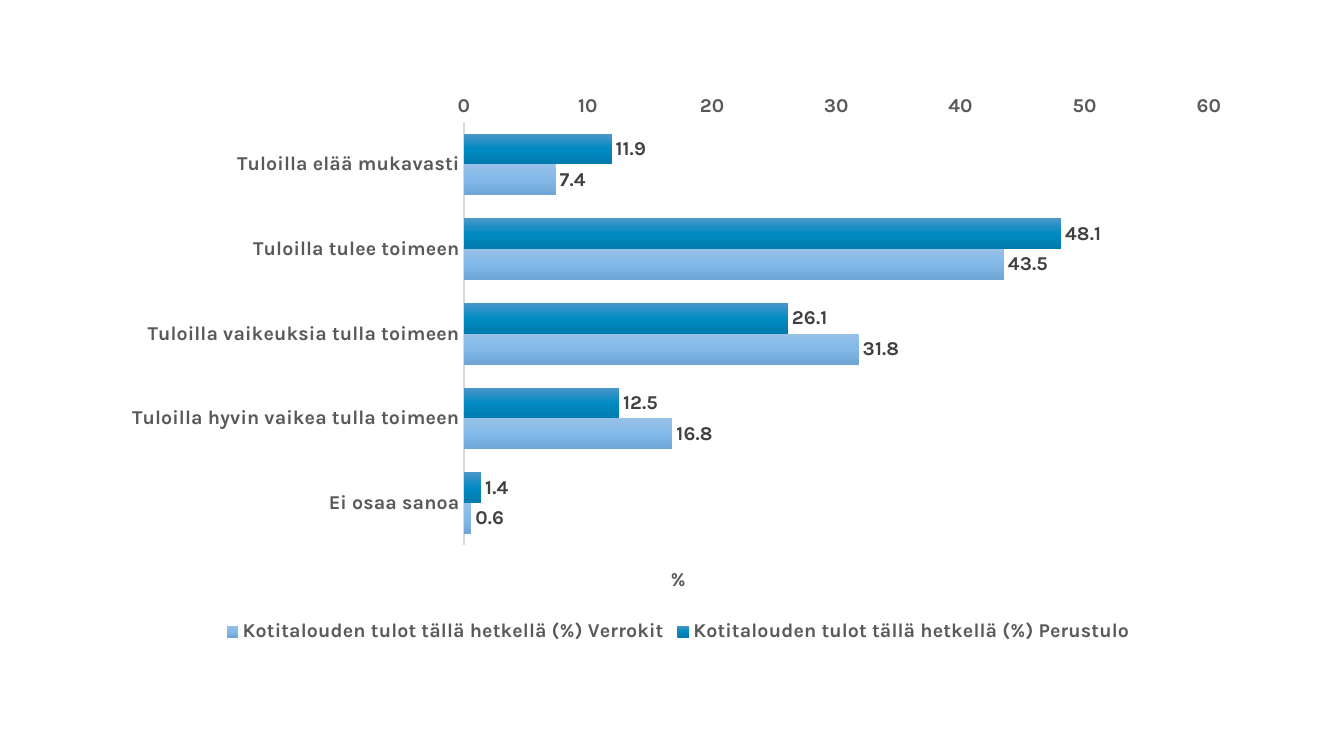
from lxml import etree
from pptx import Presentation
from pptx.chart import data as chart_data
from pptx.dml.color import RGBColor
from pptx.enum import chart as ch
from pptx.oxml import ns
from pptx.util import Pt

# Content
ANSWERS = [
    "Tuloilla elää mukavasti",
    "Tuloilla tulee toimeen",
    "Tuloilla vaikeuksia tulla toimeen",
    "Tuloilla hyvin vaikea tulla toimeen",
    "Ei osaa sanoa",
]
GROUPS = [
    ("Kotitalouden tulot tällä hetkellä (%) Perustulo",
     [11.9, 48.1, 26.1, 12.5, 1.4],
     [RGBColor(0x4B, 0x97, 0xCA), RGBColor(0x00, 0x8A, 0xC2), RGBColor(0x00, 0x7B, 0xAD)]),
    ("Kotitalouden tulot tällä hetkellä (%) Verrokit",
     [7.4, 43.5, 31.8, 16.8, 0.6],
     [RGBColor(0x96, 0xC1, 0xE8), RGBColor(0x82, 0xB9, 0xE9), RGBColor(0x6E, 0xA5, 0xD5)]),
]
UNIT = "%"

GREY = RGBColor(0x59, 0x59, 0x59)
DARK = RGBColor(0x40, 0x40, 0x40)
PALE = RGBColor(0xD9, 0xD9, 0xD9)


def style(font, size=14, color=GREY, bold=True):
    font.name, font.size, font.bold = "Karla", Pt(size), bold
    font.color.rgb = color


def write(frame, text, **format):
    run = frame.paragraphs[0].add_run()
    run.text = text
    style(run.font, **format)


def place(element, index, **fractions):
    """Give a chart part a fixed place, in fractions of the chart."""
    for old in element.findall(ns.qn("c:layout")):
        element.remove(old)
    layout = etree.Element(ns.qn("c:layout"))
    element.insert(index, layout)
    manual = etree.SubElement(layout, ns.qn("c:manualLayout"))
    if "w" in fractions:
        etree.SubElement(manual, ns.qn("c:layoutTarget"), val="inner")
    for side in ("xMode", "yMode"):
        etree.SubElement(manual, ns.qn("c:" + side), val="edge")
    for key, value in fractions.items():
        etree.SubElement(manual, ns.qn("c:" + key), val=str(value))


def shade(fill, colors):
    """Fill with evenly spaced colours from top to bottom."""
    fill.gradient()
    fill.gradient_angle = 270
    stops = fill._xPr.find(".//" + ns.qn("a:gsLst"))
    for old in list(stops):
        stops.remove(old)
    for i, color in enumerate(colors):
        position = 100000 * i // (len(colors) - 1)
        stop = etree.SubElement(stops, ns.qn("a:gs"), pos=str(position))
        etree.SubElement(stop, ns.qn("a:srgbClr"), val=str(color))


# Slide
deck = Presentation()
deck.slide_width, deck.slide_height = Pt(960), Pt(540)
slide = deck.slides.add_slide(deck.slide_layouts[6])

# Chart
incomes = chart_data.CategoryChartData(number_format="0.0")
incomes.categories = ANSWERS
for name, shares, _ in GROUPS:
    incomes.add_series(name, shares)
chart = slide.shapes.add_chart(
    ch.XL_CHART_TYPE.BAR_CLUSTERED,
    Pt(81.36), Pt(59.04), Pt(806.4), Pt(403.2), incomes).chart
style(chart.font, size=10, color=RGBColor(0, 0, 0), bold=False)
chart.has_title = False
place(chart._chartSpace.chart.plotArea, 0, x=0.31, y=0.07, w=0.66, h=0.75)

# Bars
bars = chart.plots[0]
bars.gap_width, bars.overlap, bars.vary_by_categories = 75, 0, False
for series, (_, _, colors) in zip(bars.series, GROUPS):
    shade(series.format.fill, colors)
    series.invert_if_negative = False
    labels = series.data_labels
    labels.show_value = True
    labels.number_format, labels.number_format_is_linked = "0.0", False
    labels.position = ch.XL_LABEL_POSITION.OUTSIDE_END
    style(labels.font, color=DARK)

# Axes
answer_axis, percent_axis = chart.category_axis, chart.value_axis
for axis in (answer_axis, percent_axis):
    axis.major_tick_mark = axis.minor_tick_mark = ch.XL_TICK_MARK.NONE
    axis.has_major_gridlines = False
    style(axis.tick_labels.font)
answer_axis.reverse_order = True
answer_axis.format.line.color.rgb = PALE
answer_axis.format.line.width = Pt(1)
percent_axis.minimum_scale, percent_axis.maximum_scale = 0, 60
percent_axis.major_unit = 10
percent_axis.tick_labels.number_format = "0"
percent_axis.tick_labels.number_format_is_linked = False
percent_axis.format.line.fill.background()
write(percent_axis.axis_title.text_frame, UNIT)
place(percent_axis.axis_title._element, 1, x=0.49, y=0.85)

# Legend
chart.has_legend = True
chart.legend.position = ch.XL_LEGEND_POSITION.BOTTOM
chart.legend.include_in_layout = False
style(chart.legend.font)

deck.save("out.pptx")
